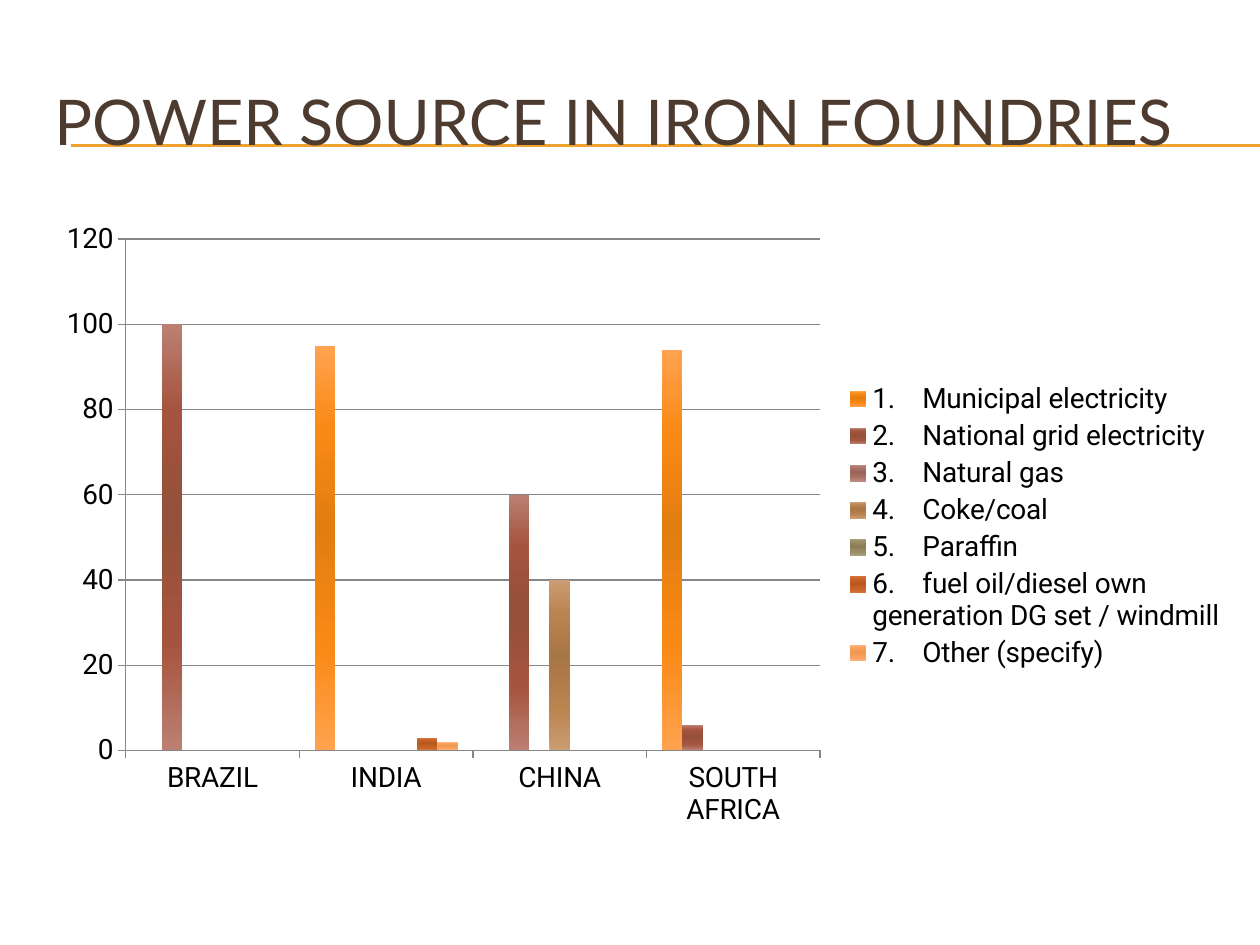
import lxml.etree
import pptx
import pptx.chart.data
import pptx.dml.color
import pptx.enum.chart
import pptx.enum.shapes
import pptx.enum.text
import pptx.oxml
import pptx.oxml.ns
import pptx.util

Pt = pptx.util.Pt
qn = pptx.oxml.ns.qn
SubElement = lxml.etree.SubElement

COLORS = {"title": "4E3B30", "rule": "F0A22E", "text": "000000", "axis": "868686"}
NUMBER_GAP = "    "
CATEGORIES = ["BRAZIL", "INDIA", "CHINA", "SOUTH AFRICA"]
SOURCES = [
    ("Municipal electricity", (None, 95, 0, 94), ("FFA350", "FA8A16", "E27D10")),
    ("National grid electricity", (100, 0, 60, 6), ("BC8072", "A5543F", "94503A")),
    ("Natural gas", (None, 0, 0, 0), ("BC8D82", "AA7266", "9A6558")),
    ("Coke/coal", (None, 0, 40, 0), ("CB9D74", "BB8350", "A87544")),
    ("Paraffin", (None, 0, 0, 0), ("AA9F7F", "998B62", "8A7D55")),
    ("fuel oil/diesel own generation DG set / windmill", (None, 3, 0, 0),
     ("D4753D", "C76224", "B8581E")),
    ("Other (specify)", (None, 2, 0, 0), ("FFB27A", "FAA260", "EE984E")),
]


class SlideBuilder:
    title_font = "Lato"
    chart_font = "Roboto"

    def __init__(self, slide):
        self.slide = slide

    def color(self, name):
        return pptx.dml.color.RGBColor.from_string(COLORS[name])

    def rule(self, left, top, right):
        line = self.slide.shapes.add_connector(
            pptx.enum.shapes.MSO_CONNECTOR.STRAIGHT, Pt(left), Pt(top), Pt(right), Pt(top))
        line.line.color.rgb = self.color("rule")
        line.line.width = Pt(0.75)
        SubElement(line._element.spPr, qn("a:effectLst"))

    def title(self, text, left, top, width, height):
        frame = self.slide.shapes.add_textbox(Pt(left), Pt(top), Pt(width), Pt(height)).text_frame
        frame.word_wrap = True
        frame.vertical_anchor = pptx.enum.text.MSO_ANCHOR.MIDDLE
        paragraph = frame.paragraphs[0]
        paragraph.text = text
        paragraph.font.name = self.title_font
        paragraph.font.size = Pt(36)
        paragraph.font.color.rgb = self.color("title")

    def gradient(self, series, tones):
        edge, middle, center = tones
        fill = series.format.fill
        fill.gradient()
        fill.gradient_angle = 90
        stops = series._element.spPr.find(qn("a:gradFill")).find(qn("a:gsLst"))
        for stop in list(stops):
            stops.remove(stop)
        positions = (0, 25, 55, 80, 100)
        for position, tone in zip(positions, (edge, middle, center, middle, edge)):
            stop = SubElement(stops, qn("a:gs"), pos=str(position * 1000))
            SubElement(stop, qn("a:srgbClr"), val=tone)

    def plot_layout(self, chart, **fractions):
        plot_area = chart._chartSpace.chart.plotArea
        layout = plot_area.find(qn("c:layout"))
        if layout is None:
            layout = pptx.oxml.parse_xml(
                '<c:layout xmlns:c="http://schemas.openxmlformats.org/drawingml/2006/chart"/>')
            plot_area.insert(0, layout)
        manual = SubElement(layout, qn("c:manualLayout"))
        settings = {"layoutTarget": "inner", "xMode": "edge", "yMode": "edge", **fractions}
        for name, value in settings.items():
            SubElement(manual, qn(f"c:{name}"), val=str(value))

    def column_chart(self, categories, sources, left, top, width, height):
        data = pptx.chart.data.CategoryChartData()
        data.categories = categories
        for number, (name, values, tones) in enumerate(sources, 1):
            data.add_series(f"{number}.{NUMBER_GAP}{name}", values)
        chart = self.slide.shapes.add_chart(
            pptx.enum.chart.XL_CHART_TYPE.COLUMN_CLUSTERED,
            Pt(left), Pt(top), Pt(width), Pt(height), data).chart
        chart.font.name = self.chart_font
        chart.font.size = Pt(16)
        chart.font.color.rgb = self.color("text")
        chart.has_title = False
        chart.has_legend = True
        chart.legend.position = pptx.enum.chart.XL_LEGEND_POSITION.RIGHT
        chart.legend.include_in_layout = False
        plot = chart.plots[0]
        plot.gap_width = 150
        plot.overlap = 0
        plot.vary_by_categories = False
        for series, (name, values, tones) in zip(plot.series, sources):
            series.invert_if_negative = False
            self.gradient(series, tones)
        value_axis = chart.value_axis
        value_axis.minimum_scale = 0
        value_axis.maximum_scale = 120
        value_axis.major_unit = 20
        value_axis.has_major_gridlines = True
        for part in (value_axis, chart.category_axis, value_axis.major_gridlines):
            part.format.line.color.rgb = self.color("axis")
            part.format.line.width = Pt(0.75)
        for axis in (value_axis, chart.category_axis):
            axis.major_tick_mark = pptx.enum.chart.XL_TICK_MARK.OUTSIDE
        self.plot_layout(chart, x=0.07, y=0.04, w=0.58, h=0.82)


def main():
    presentation = pptx.Presentation()
    presentation.slide_width = Pt(720)
    presentation.slide_height = Pt(540)
    builder = SlideBuilder(presentation.slides.add_slide(presentation.slide_layouts[6]))
    for top in (82.8, 83.5):
        builder.rule(40.5, top, 720)
    builder.title("POWER SOURCE IN IRON FOUNDRIES", 24, 36, 684, 66)
    builder.column_chart(CATEGORIES, SOURCES, 24, 122.4, 684, 356.4)
    presentation.save("out.pptx")


if __name__ == "__main__":
    main()
